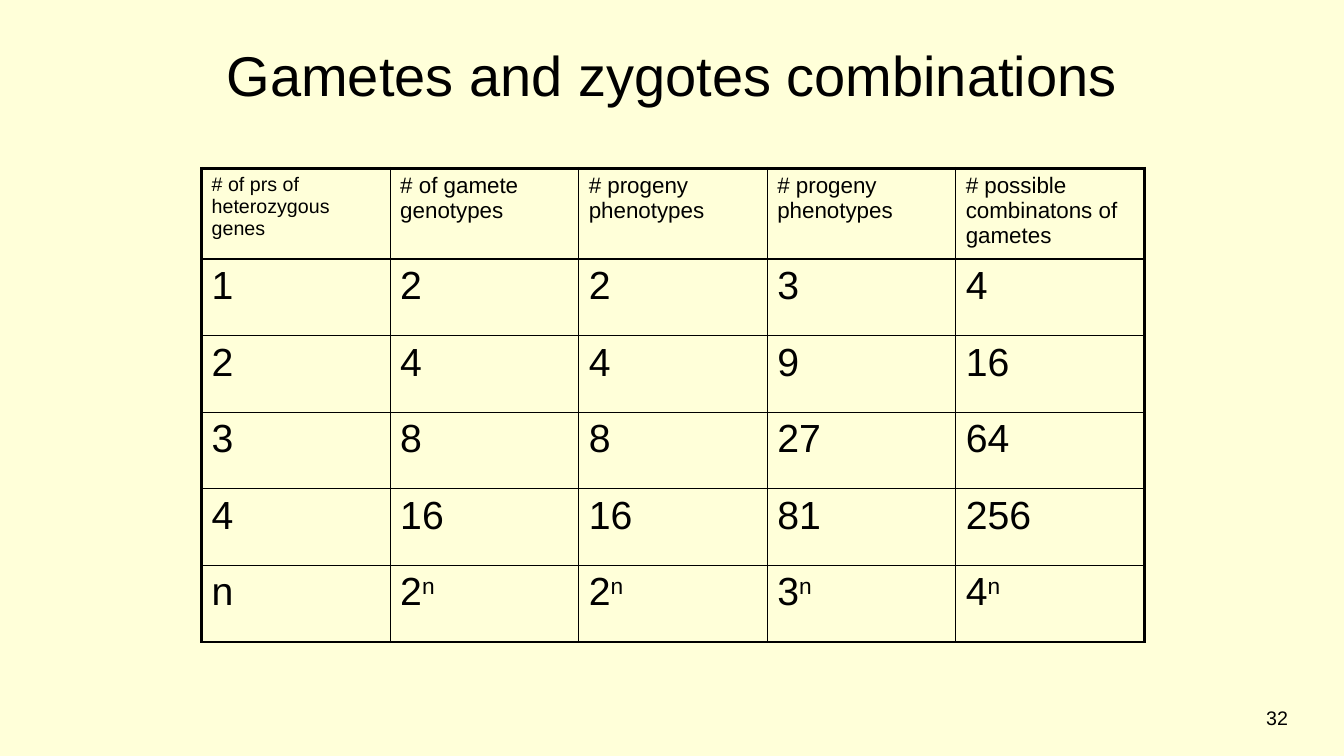
import dataclasses

import pptx
import pptx.dml.color
import pptx.enum.text
import pptx.oxml
import pptx.oxml.ns
import pptx.util

Inches = pptx.util.Inches
Pt = pptx.util.Pt
RGBColor = pptx.dml.color.RGBColor
Align = pptx.enum.text.PP_ALIGN
Anchor = pptx.enum.text.MSO_ANCHOR


@dataclasses.dataclass(frozen=True)
class Theme:
    font: str = "Arial"
    background: str = "FFFFD9"
    ink: str = "000000"
    title_size: float = 40
    first_header_size: float = 14
    header_size: float = 16
    value_size: float = 28
    number_size: float = 14
    outer_line: float = 2.25
    inner_line: float = 1


@dataclasses.dataclass(frozen=True)
class Label:
    text: str
    left: float
    top: float
    width: float
    height: float
    size: float
    align: Align
    anchor: Anchor
    wrap: bool


@dataclasses.dataclass(frozen=True)
class Entry:
    text: str
    size: float
    exponent: str = ""


THEME = Theme()

LABELS = [
    Label("Gametes and zygotes combinations", 0.44, 0.3, 12.44, 0.87,
          THEME.title_size, Align.CENTER, Anchor.MIDDLE, True),
    Label("32", 12.46, 6.95, 0.44, 0.34,
          THEME.number_size, Align.LEFT, Anchor.TOP, False),
]

HEADERS = [
    Entry("# of prs of heterozygous genes", THEME.first_header_size),
    Entry("# of gamete genotypes", THEME.header_size),
    Entry("# progeny phenotypes", THEME.header_size),
    Entry("# progeny phenotypes", THEME.header_size),
    Entry("# possible combinatons of gametes", THEME.header_size),
]
BASES = [2, 2, 3, 4]
GENE_PAIRS = range(1, 5)

TABLE_LEFT, TABLE_TOP = 2, 1.67
COLUMN_WIDTH, ROW_HEIGHT = 1.87, 0.76


def table_entries() -> list[list[Entry]]:
    """Headers, the powers for each number of gene pairs, and the general rule."""
    size = THEME.value_size
    powers = [
        [Entry(str(pairs), size)] + [Entry(str(base ** pairs), size) for base in BASES]
        for pairs in GENE_PAIRS
    ]
    rule = [Entry("n", size)] + [Entry(str(base), size, "n") for base in BASES]
    return [HEADERS, *powers, rule]


def add_run(paragraph, text: str, size: float, superscript: bool = False) -> None:
    run = paragraph.add_run()
    run.text = text
    run.font.name = THEME.font
    run.font.size = Pt(size)
    run.font.bold = False
    run.font.color.rgb = RGBColor.from_string(THEME.ink)
    if superscript:
        run.font._element.set("baseline", "30000")


def add_label(slide, label: Label) -> None:
    shape = slide.shapes.add_textbox(
        Inches(label.left), Inches(label.top), Inches(label.width), Inches(label.height))
    frame = shape.text_frame
    frame.word_wrap = label.wrap
    frame.vertical_anchor = label.anchor
    paragraph = frame.paragraphs[0]
    paragraph.alignment = label.align
    add_run(paragraph, label.text, label.size)


def add_border(cell, side: str, width: float) -> None:
    line = pptx.oxml.parse_xml(
        f'<a:{side} {pptx.oxml.ns.nsdecls("a")} w="{Pt(width)}">'
        f'<a:solidFill><a:srgbClr val="{THEME.ink}"/></a:solidFill></a:{side}>')
    cell._tc.get_or_add_tcPr().append(line)


def fill_cell(cell, entry: Entry, outer_sides: dict[str, bool]) -> None:
    for side, is_outer in outer_sides.items():
        add_border(cell, side, THEME.outer_line if is_outer else THEME.inner_line)
    cell.fill.background()
    paragraph = cell.text_frame.paragraphs[0]
    add_run(paragraph, entry.text, entry.size)
    if entry.exponent:
        add_run(paragraph, entry.exponent, entry.size, superscript=True)


def add_combination_table(slide, entries: list[list[Entry]]) -> None:
    row_count, column_count = len(entries), len(entries[0])
    table = slide.shapes.add_table(
        row_count, column_count, Inches(TABLE_LEFT), Inches(TABLE_TOP),
        Inches(COLUMN_WIDTH * column_count), Inches(ROW_HEIGHT * row_count)).table
    table.first_row = False
    table.horz_banding = False
    for row_index, row in enumerate(entries):
        for column_index, entry in enumerate(row):
            outer_sides = {
                "lnL": column_index == 0,
                "lnR": column_index == column_count - 1,
                "lnT": row_index == 0,
                "lnB": row_index == row_count - 1,
            }
            fill_cell(table.cell(row_index, column_index), entry, outer_sides)


def main() -> None:
    presentation = pptx.Presentation()
    presentation.slide_width = Inches(13.33)
    presentation.slide_height = Inches(7.5)
    slide = presentation.slides.add_slide(presentation.slide_layouts[6])

    # Background
    slide.background.fill.solid()
    slide.background.fill.fore_color.rgb = RGBColor.from_string(THEME.background)

    # Title and slide number
    for label in LABELS:
        add_label(slide, label)

    # Table of combinations
    add_combination_table(slide, table_entries())

    presentation.save("out.pptx")


if __name__ == "__main__":
    main()
